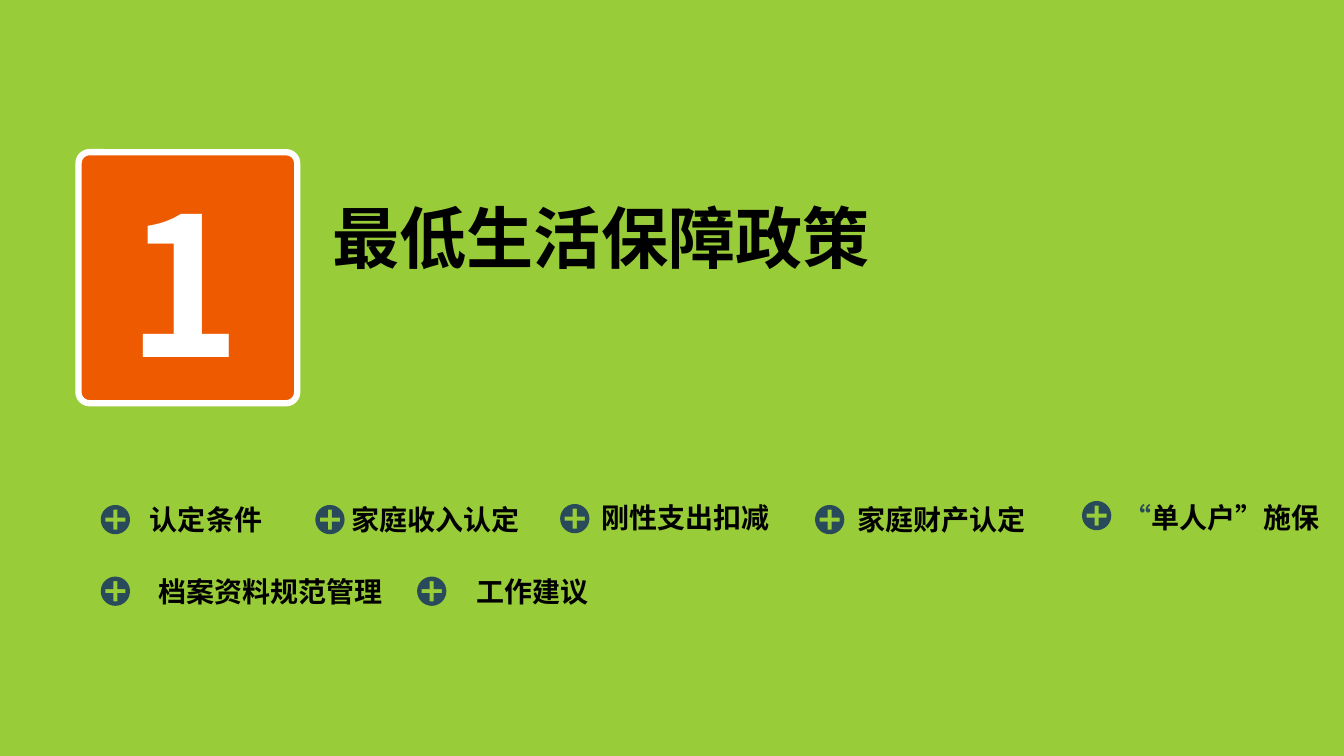
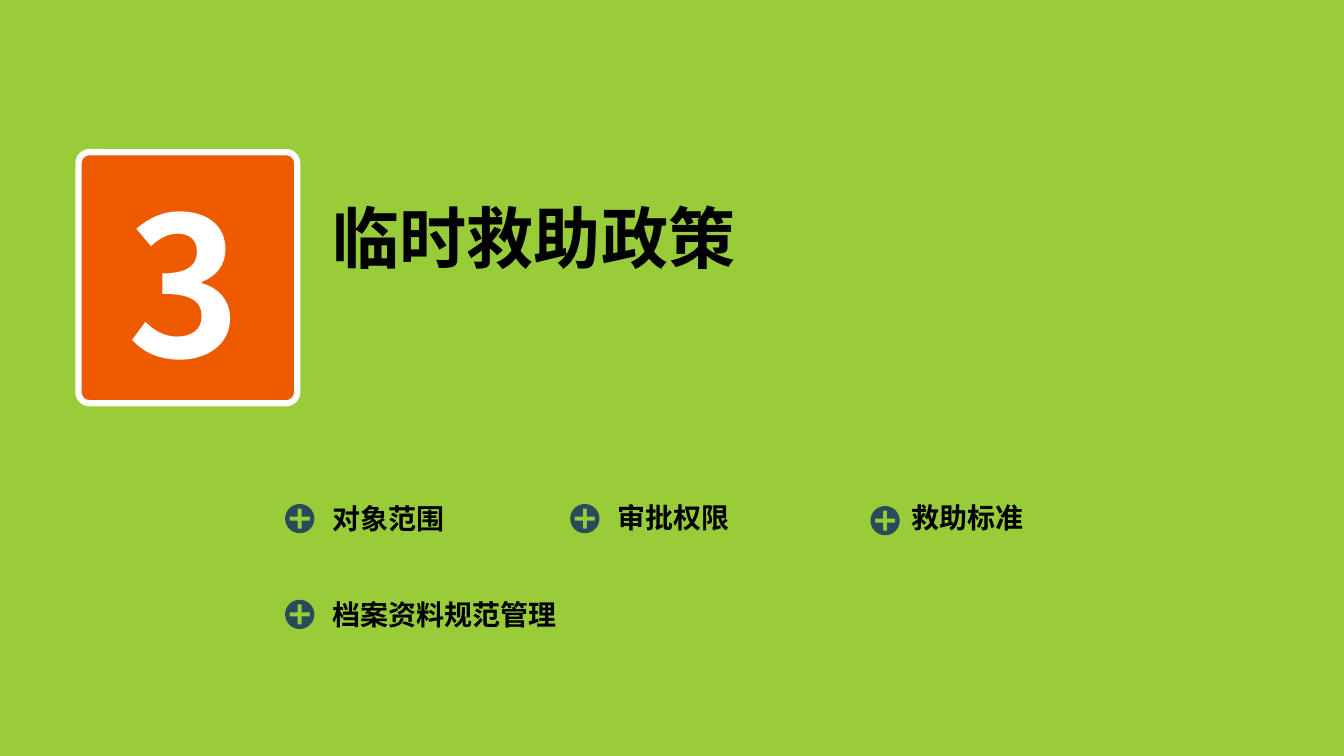
from dataclasses import dataclass

from lxml import etree
from pptx import Presentation
from pptx.dml.color import RGBColor
from pptx.enum import shapes, text
from pptx.oxml import ns
from pptx.util import Inches, Pt


@dataclass(frozen=True)
class Theme:
    font: str = "Noto Sans CJK SC"
    background: str = "99CC39"
    card: str = "ED5A00"
    white: str = "FFFFFF"
    ink: str = "000000"
    marker: str = "294A5A"
    number_size: int = 138
    title_size: int = 48
    label_size: int = 20


THEME = Theme()
MARKER_SIZE = 0.29
CURVE_RATIO = 0.55
SECTIONS = [
    {
        "number": "1",
        "title": "最低生活保障政策",
        "topics": [
            ("认定条件", (1.0, 5.01), (1.39, 4.94)),
            ("家庭收入认定", (3.13, 5.01), (3.39, 4.94)),
            ("刚性支出扣减", (5.56, 5.0), (5.87, 4.92)),
            ("家庭财产认定", (8.09, 5.01), (8.41, 4.94)),
            ("“单人户”施保", (10.74, 4.97), (11.05, 4.92)),
            ("档案资料规范管理", (1.0, 5.72), (1.47, 5.65)),
            ("工作建议", (4.14, 5.72), (4.63, 5.65)),
        ],
    },
    {
        "number": "3",
        "title": "临时救助政策",
        "topics": [
            ("对象范围", (2.83, 5.0), (3.2, 4.93)),
            ("审批权限", (5.66, 5.0), (6.03, 4.92)),
            ("救助标准", (8.64, 5.02), (8.95, 4.92)),
            ("档案资料规范管理", (2.83, 5.95), (3.2, 5.88)),
        ],
    },
]


def color(value):
    return RGBColor.from_string(value)


def place(shape, left, top, width, height):
    shape.left, shape.top = Inches(left), Inches(top)
    shape.width, shape.height = Inches(width), Inches(height)


def write(shape, parts, size, margins=(0.1, 0.05)):
    frame = shape.text_frame
    frame.word_wrap = True
    frame.auto_size = text.MSO_AUTO_SIZE.NONE
    frame.vertical_anchor = text.MSO_ANCHOR.TOP
    frame.margin_left = frame.margin_right = Inches(margins[0])
    frame.margin_top = frame.margin_bottom = Inches(margins[1])
    paragraph = frame.paragraphs[0]
    paragraph.alignment = text.PP_ALIGN.LEFT
    paragraph.line_spacing = 1.0
    for content, fill in parts:
        run = paragraph.add_run()
        run.text = content
        run.font.name = THEME.font
        run.font.size = Pt(size)
        run.font.bold = True
        run.font.color.rgb = color(fill)
        east_asian = etree.SubElement(run.font._element, ns.qn("a:ea"))
        east_asian.set("typeface", THEME.font)


def add_text(slide, parts, left, top, width, height, size):
    box = slide.shapes.add_textbox(0, 0, 0, 0)
    place(box, left, top, width, height)
    write(box, parts, size)


def add_card(slide, number):
    card = slide.shapes.add_shape(shapes.MSO_SHAPE.ROUNDED_RECTANGLE, 0, 0, 0, 0)
    place(card, 0.78, 1.51, 2.17, 2.49)
    card.adjustments[0] = 0.05
    card.shadow.inherit = False
    card.fill.solid()
    card.fill.fore_color.rgb = color(THEME.card)
    card.line.color.rgb = color(THEME.white)
    card.line.width = Pt(4.5)
    add_text(slide, [(number, THEME.white)], 1.17, 1.58, 1.4, 2.42, THEME.number_size)


def rotations(points):
    turned = []
    for _ in range(4):
        turned.extend(points)
        points = [(-y, x) for x, y in points]
    return turned


def round_off(marker, radius):
    reach = radius * CURVE_RATIO
    controls = rotations([(reach, -radius), (radius, -reach)])
    segments = list(marker._element.iter(ns.qn("a:lnTo")))[:4]
    for index, segment in enumerate(segments):
        segment.tag = ns.qn("a:cubicBezTo")
        for position, (x, y) in enumerate(controls[2 * index:2 * index + 2]):
            point = etree.Element(ns.qn("a:pt"))
            point.set("x", str(Inches(radius + x)))
            point.set("y", str(Inches(radius + y)))
            segment.insert(position, point)


def add_marker(slide, left, top):
    radius = MARKER_SIZE / 2
    arm, half = 0.1, 0.02
    circle = rotations([(0, -radius)])
    plus = rotations([(half, -arm), (half, -half), (arm, -half)])[::-1]
    outlines = [
        [(Inches(left + radius + x), Inches(top + radius + y)) for x, y in outline]
        for outline in (circle + circle[:1], plus)
    ]
    builder = slide.shapes.build_freeform(*outlines[0][0], scale=1.0)
    builder.add_line_segments(outlines[0][1:], close=True)
    builder.move_to(*outlines[1][0])
    builder.add_line_segments(outlines[1][1:], close=True)
    marker = builder.convert_to_shape()
    round_off(marker, radius)
    marker.shadow.inherit = False
    marker.fill.solid()
    marker.fill.fore_color.rgb = color(THEME.marker)
    marker.line.fill.background()


def label_parts(label):
    if label.startswith("“"):
        return [(label[0], THEME.marker), (label[1:], THEME.ink)]
    return [(label, THEME.ink)]


def add_section(presentation, section):
    slide = presentation.slides.add_slide(presentation.slide_layouts[5])
    title = slide.shapes.title
    place(title, 3.3, 1.95, 7.73, 0.81)
    write(title, [(section["title"], THEME.ink)], THEME.title_size, margins=(0, 0))
    add_card(slide, section["number"])
    for label, marker_at, label_at in section["topics"]:
        add_marker(slide, *marker_at)
        width = len(label) * THEME.label_size / 72 + 0.25
        add_text(slide, label_parts(label), *label_at, width, 0.44, THEME.label_size)


def main():
    presentation = Presentation()
    presentation.slide_width = Inches(13.34)
    presentation.slide_height = Inches(7.5)
    background = presentation.slide_master.background.fill
    background.solid()
    background.fore_color.rgb = color(THEME.background)
    for section in SECTIONS:
        add_section(presentation, section)
    presentation.save("out.pptx")


if __name__ == "__main__":
    main()
